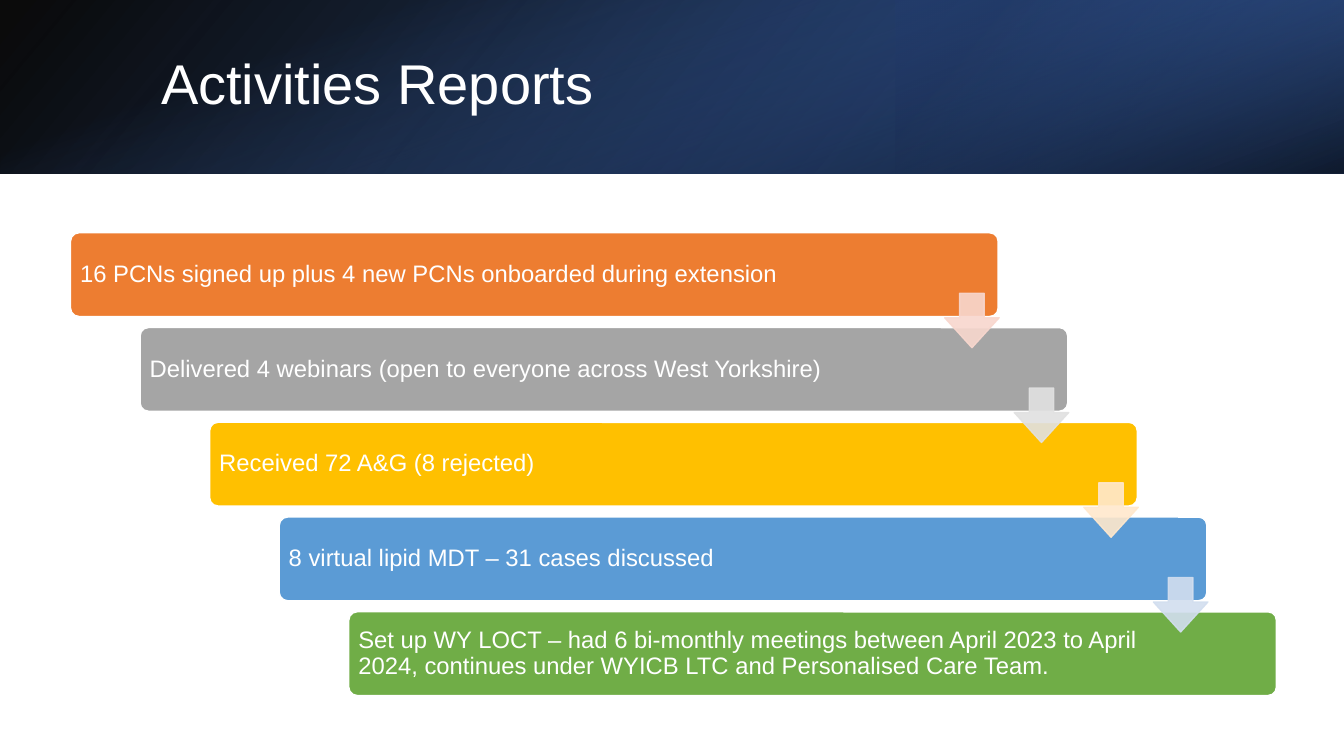
"""Build the Activities Reports slide: a gradient banner above a staircase of bars."""
from lxml import etree
from pptx import Presentation
from pptx.dml.color import RGBColor
from pptx.enum.shapes import MSO_SHAPE as Shape
from pptx.enum.text import MSO_ANCHOR as Anchor, PP_ALIGN as Align
from pptx.oxml import parse_xml
from pptx.oxml.ns import nsdecls, qn
from pptx.util import Inches, Pt

TITLE = "Activities Reports"
STEPS = [
    ("16 PCNs signed up plus 4 new PCNs onboarded during extension", "ED7D31", "F8D7CE"),
    ("Delivered 4 webinars (open to everyone across West Yorkshire)", "A5A5A5", "E1E1E1"),
    ("Received 72 A&G (8 rejected)", "FFC000", "FFE8CC"),
    ("8 virtual lipid MDT – 31 cases discussed", "5B9BD5", "D2DEEF"),
    ("Set up WY LOCT – had 6 bi-monthly meetings between April 2023 to April 2024, "
     "continues under WYICB LTC and Personalised Care Team.", "70AD47", None),
]
W, H, BANNER_H = 13.33, 7.5, 1.72
BANNER = [
    dict(box=(0, 0, W, BANNER_H), rot=0, flip=True, angle=140,
         stops=[(0, "000000", 96), (100, "2F5597", 100)]),
    dict(box=(W * 2 / 3, 0, W / 3, BANNER_H), rot=180, flip=True, angle=320,
         stops=[(19, "203864", 68), (100, "4472C4", 79)]),
    dict(box=((W - BANNER_H) / 2, (BANNER_H - W) / 2, BANNER_H, W), rot=90, flip=False,
         angle=340, stops=[(23, "4472C4", 0), (99, "000000", 74)]),
]
LEFT, TOP, COL, ROW = 0.7, 2.31, 0.69, 0.94
BAR_W, BAR_H = 9.2, 0.83
ARROW, ARROW_IN, ARROW_DOWN, ARROW_ALPHA = 0.54, 0.53, 0.6, 90


def rgb(code):
    return RGBColor.from_string(code)


def add_shape(s, kind, box, fill=None, line=None, adjust=()):
    sp = s.shapes.add_shape(kind, *map(Inches, box))
    sp.shadow.inherit = False
    for part, color in ((sp.fill, fill), (sp.line.fill, line)):
        if color:
            part.solid()
            part.fore_color.rgb = rgb(color)
        else:
            part.background()
    if line:
        sp.line.width = Pt(1)
    for i, value in enumerate(adjust):
        sp.adjustments[i] = value
    return sp


def set_gradient(sp, stops, angle):
    gs = "".join(
        f'<a:gs pos="{pos * 1000}"><a:srgbClr val="{color}">'
        f'<a:alpha val="{alpha * 1000}"/></a:srgbClr></a:gs>'
        for pos, color, alpha in stops)
    grad = parse_xml(
        f'<a:gradFill {nsdecls("a")} rotWithShape="1"><a:gsLst>{gs}</a:gsLst>'
        f'<a:lin ang="{angle * 60000}" scaled="0"/></a:gradFill>')
    spPr = sp._element.spPr
    spPr.replace(spPr.find(qn("a:noFill")), grad)


def set_alpha(sp, percent):
    for color in sp._element.spPr.iter(qn("a:srgbClr")):
        etree.SubElement(color, qn("a:alpha")).set("val", str(percent * 1000))


def write(sp, text, size, **frame):
    tf = sp.text_frame
    settings = dict(word_wrap=True, vertical_anchor=Anchor.MIDDLE, **frame)
    for name, value in settings.items():
        setattr(tf, name, value)
    p = tf.paragraphs[0]
    p.alignment, p.line_spacing = Align.LEFT, 0.9
    r = p.add_run()
    r.text = text
    for name, value in dict(name="Arial", size=Pt(size)).items():
        setattr(r.font, name, value)
    r.font.color.rgb = rgb("FFFFFF")


def main():
    prs = Presentation()
    prs.slide_width, prs.slide_height = Inches(W), Inches(H)
    s = prs.slides.add_slide(prs.slide_layouts[6])

    for layer in BANNER:
        sp = add_shape(s, Shape.RECTANGLE, layer["box"])
        sp.rotation = layer["rot"]
        if layer["flip"]:
            sp._element.spPr.xfrm.set("flipH", "1")
        set_gradient(sp, layer["stops"], layer["angle"])
    write(s.shapes.add_textbox(*map(Inches, (1.5, 0.38, 10.98, 0.96))), TITLE, 40)

    arrows = []
    for i, (text, color, arrow_color) in enumerate(STEPS):
        x, y = LEFT + i * COL, TOP + i * ROW
        bar = add_shape(s, Shape.ROUNDED_RECTANGLE, (x, y, BAR_W, BAR_H),
                        color, "FFFFFF", [0.1])
        write(bar, text, 17, margin_left=Inches(0.07), margin_right=Inches(1.3),
              margin_top=Inches(0.07), margin_bottom=Inches(0.07))
        if arrow_color:
            arrows.append((x + BAR_W - ARROW_IN, y + ARROW_DOWN, arrow_color))

    for x, y, color in arrows:
        sp = add_shape(s, Shape.DOWN_ARROW, (x, y, ARROW, ARROW), color, color, [0.45, 0.55])
        set_alpha(sp, ARROW_ALPHA)

    prs.save("out.pptx")


if __name__ == "__main__":
    main()
